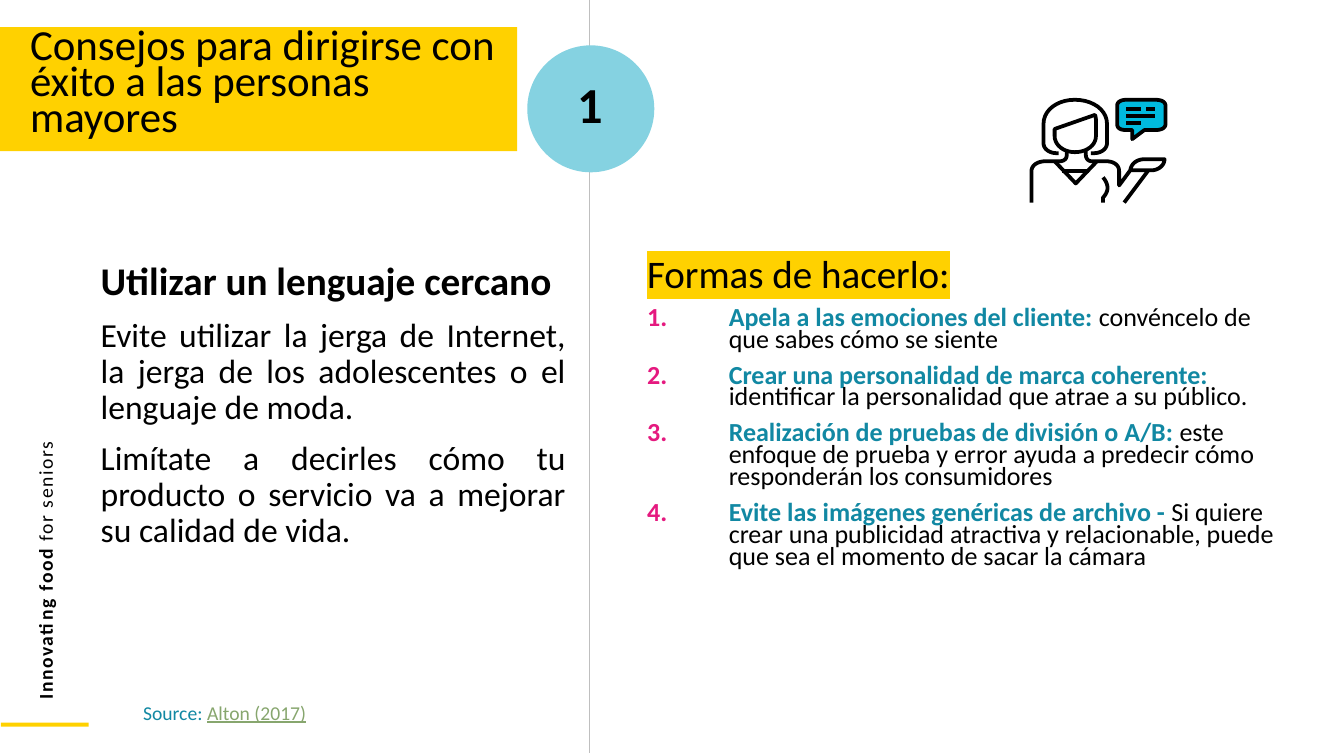
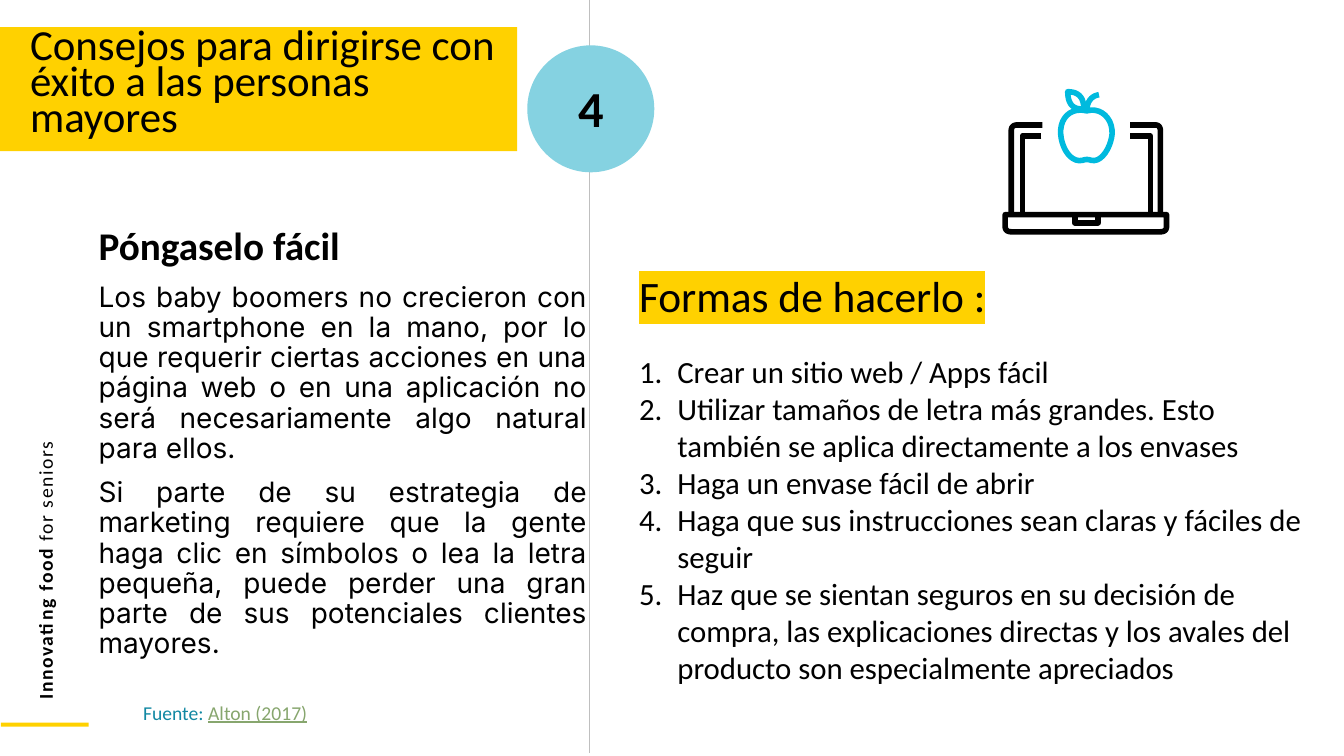
from lxml import etree
from pptx import Presentation
from pptx.dml.color import RGBColor
from pptx.enum.shapes import MSO_CONNECTOR, MSO_SHAPE
from pptx.enum.text import MSO_ANCHOR, PP_ALIGN
from pptx.oxml.ns import qn
from pptx.util import Inches, Pt

OVAL, RECT = MSO_SHAPE.OVAL, MSO_SHAPE.RECTANGLE
TOP = MSO_ANCHOR.TOP
LEFT, CENTER, JUSTIFY = PP_ALIGN.LEFT, PP_ALIGN.CENTER, PP_ALIGN.JUSTIFY

WIDTH, HEIGHT = 13.33, 7.5
DIVIDER_X, DIVIDER_END = 5.85, 7.47
COLORS = {
    "black": "000000", "yellow": "FFD100", "sky": "85D2E1", "teal": "1188A3",
    "green": "87A66E", "pink": "E5197F", "cyan": "00BADE", "gray": "BFBFBF",
}

TITLE = "Consejos para dirigirse con éxito a las personas mayores"
TAGLINE = [("Innovating food ", {"bold": True}), ("for seniors", {})]
CITATION = "Alton (2017)"

# Each icon part is a list of strokes: pairs are corners, six numbers are a cubic curve.
SPEAKER_ICON = {"weight": 2.7, "parts": [
    ([[(10.5, 1.52), (10.48, 1.52), (10.41, 1.52, 10.35, 1.48, 10.35, 1.42), (10.35, 1.23),
       (10.35, 1.09, 10.49, 0.99, 10.66, 0.99), (10.84, 0.99, 10.98, 1.09, 10.98, 1.23),
       (10.98, 1.42), (10.98, 1.48, 10.92, 1.52, 10.85, 1.52), (10.82, 1.52)]], {}),
    ([[(10.46, 1.28), (10.86, 1.14), (10.87, 1.16, 10.87, 1.19, 10.87, 1.21), (10.87, 1.35),
       (10.87, 1.44, 10.78, 1.51, 10.66, 1.51), (10.55, 1.51, 10.46, 1.44, 10.46, 1.35),
       (10.46, 1.28)],
      [(10.23, 2.01), (10.23, 1.7), (10.23, 1.64, 10.29, 1.6, 10.37, 1.6), (10.51, 1.6),
       (10.56, 1.6, 10.58, 1.57, 10.58, 1.54), (10.58, 1.5)],
      [(10.77, 1.5), (10.77, 1.54), (10.77, 1.57, 10.79, 1.6, 10.83, 1.6), (10.97, 1.6),
       (11.05, 1.6, 11.1, 1.64, 11.1, 1.7), (11.1, 1.84), (11.21, 1.69), (11.42, 1.69),
       (11.49, 1.69, 11.55, 1.64, 11.55, 1.58), (11.35, 1.58),
       (11.28, 1.58, 11.22, 1.62, 11.21, 1.69)],
      [(11.39, 1.69), (11.15, 2.01)],
      [(10.46, 1.6), (10.67, 1.82), (10.88, 1.6)],
      [(10.53, 1.7), (10.8, 1.7)]], {}),
    ([[(10.94, 1.76), (11, 1.83, 11, 1.9, 10.94, 1.96), (10.94, 2.01)]], {}),
    ([[(11.17, 0.99), (11.46, 0.99), (11.52, 0.99, 11.56, 1.01, 11.56, 1.05), (11.56, 1.23),
       (11.56, 1.27, 11.52, 1.29, 11.46, 1.29), (11.35, 1.29), (11.23, 1.38), (11.23, 1.29),
       (11.17, 1.29), (11.11, 1.29, 11.08, 1.27, 11.08, 1.23), (11.08, 1.05),
       (11.08, 1.01, 11.12, 0.99, 11.17, 0.99)]], {"fill": "cyan"}),
    ([[(11.17, 1.08), (11.32, 1.08)]], {}),
    ([[(11.37, 1.08), (11.46, 1.08)]], {}),
    ([[(11.17, 1.15), (11.46, 1.15)]], {}),
    ([[(11.17, 1.22), (11.32, 1.22)]], {}),
]}
LAPTOP_ICON = {"weight": 4, "parts": [
    ([[(10.78, 1.1), (10.92, 1.06, 11.04, 1.18, 11.03, 1.33),
       (11.02, 1.45, 10.93, 1.62, 10.82, 1.59), (10.79, 1.58, 10.77, 1.58, 10.74, 1.59),
       (10.62, 1.62, 10.53, 1.47, 10.52, 1.33), (10.51, 1.18, 10.61, 1.06, 10.78, 1.1)],
      [(10.78, 1.09), (10.78, 1.02, 10.82, 0.95, 10.9, 0.94)],
      [(10.59, 0.91), (10.68, 0.91, 10.75, 0.95, 10.75, 1.08),
       (10.65, 1.09, 10.59, 1.04, 10.59, 0.91)]], {"color": "cyan"}),
    ([[(10.34, 1.24), (10.09, 1.24), (10.05, 1.24, 10.03, 1.26, 10.03, 1.3), (10.03, 2.11)],
      [(11.21, 1.24), (11.46, 1.24), (11.49, 1.24, 11.51, 1.26, 11.51, 1.3), (11.51, 2.11)],
      [(10.33, 1.35), (10.14, 1.35), (10.14, 2.11)],
      [(11.21, 1.35), (11.41, 1.35), (11.41, 2.11)],
      [(9.97, 2.13), (11.57, 2.13), (11.57, 2.25), (11.57, 2.28, 11.55, 2.3, 11.51, 2.3),
       (10.03, 2.3), (9.99, 2.3, 9.97, 2.28, 9.97, 2.25), (9.97, 2.13)],
      [(10.66, 2.15), (10.66, 2.21), (10.89, 2.21), (10.89, 2.15)]], {}),
]}

TIPS = [
    {
        "number": "1", "number_at": (5.22, 0.74), "source": "Source: ", "icon": SPEAKER_ICON,
        "heading": "Utilizar un lenguaje cercano",
        "advice": [
            "Evite utilizar la jerga de Internet, la jerga de los adolescentes o el lenguaje "
            "de moda.",
            "Limítate a decirles cómo tu producto o servicio va a mejorar su calidad de vida.",
        ],
        "advice_box": (0.9, 2.55, 4.81, 4.07), "advice_format": {"size": 24},
        "ways_title": "Formas de hacerlo:", "ways_title_format": {"size": 27.9, "spacing": 0.7},
        "ways": [
            ("Apela a las emociones del cliente: ", "convéncelo de que sabes cómo se siente"),
            ("Crear una personalidad de marca coherente: ",
             "identificar la personalidad que atrae a su público."),
            ("Realización de pruebas de división o A/B: ",
             "este enfoque de prueba y error ayuda a predecir cómo responderán los consumidores"),
            ("Evite las imágenes genéricas de archivo - ",
             "Si quiere crear una publicidad atractiva y relacionable, puede que sea el momento "
             "de sacar la cámara"),
        ],
        "ways_box": (6.32, 2.55, 6.47, 3.76), "ways_gap": 10,
        "ways_format": {"size": 18.6, "spacing": 0.7, "before": 10, "hanging": 0.81,
                        "number_color": "pink"},
    },
    {
        "number": "4", "number_at": (5.23, 0.78), "source": "Fuente: ", "icon": LAPTOP_ICON,
        "heading": "Póngaselo fácil",
        "advice": [
            "Los baby boomers no crecieron con un smartphone en la mano, por lo que requerir "
            "ciertas acciones en una página web o en una aplicación no será necesariamente "
            "algo natural para ellos.",
            "Si parte de su estrategia de marketing requiere que la gente haga clic en símbolos "
            "o lea la letra pequeña, puede perder una gran parte de sus potenciales clientes "
            "mayores.",
        ],
        "advice_box": (0.88, 2.2, 5.04, 4.07), "advice_format": {"size": 20, "font": "Inter"},
        "ways_title": "Formas de hacerlo :", "ways_title_format": {"size": 31, "spacing": 0.9},
        "ways": [
            ("", "Crear un sitio web / Apps fácil"),
            ("", "Utilizar tamaños de letra más grandes. Esto también se aplica directamente "
                 "a los envases"),
            ("", "Haga un envase fácil de abrir"),
            ("", "Haga que sus instrucciones sean claras y fáciles de seguir"),
            ("", "Haz que se sientan seguros en su decisión de compra, las explicaciones "
                 "directas y los avales del producto son especialmente apreciados"),
        ],
        "ways_box": (6.24, 2.68, 6.93, 4.21), "ways_gap": 22,
        "ways_format": {"size": 22, "hanging": 0.38, "number_color": "black"},
    },
]


def rgb(name):
    return RGBColor.from_string(COLORS[name])


def add_solid(parent, tag, name):
    holder = etree.SubElement(parent, qn(tag))
    etree.SubElement(holder, qn("a:srgbClr")).set("val", COLORS[name])
    return holder


def add_run(paragraph, text, size=14, font="Calibri", color="black", bold=False,
            underline=False, highlight=None, tracking=None):
    run = paragraph.add_run()
    run.text = text
    run.font.size, run.font.bold, run.font.underline = Pt(size), bold, underline
    run.font.color.rgb = rgb(color)
    run.font.name = font
    properties = run.font._element
    if highlight:
        properties.find(qn("a:latin")).addprevious(add_solid(properties, "a:highlight", highlight))
    if tracking:
        properties.set("spc", str(tracking))


def write(frame, runs, align=LEFT, spacing=1.0, before=0, indent=0, hanging=0,
          number_color=None, **text_format):
    """Add a paragraph; runs is a string or (text, own format) pairs."""
    paragraph = frame.paragraphs[0]
    first = not paragraph.runs
    if not first:
        paragraph = frame.add_paragraph()
    properties = paragraph._p.get_or_add_pPr()
    if hanging or indent:
        properties.set("marL", str(Inches(hanging or indent)))
        properties.set("indent", str(-Inches(hanging)))
    if number_color:
        add_solid(properties, "a:buClr", number_color)
        etree.SubElement(properties, qn("a:buAutoNum")).set("type", "arabicPeriod")
    paragraph.alignment, paragraph.line_spacing = align, spacing
    paragraph.space_before = Pt(0 if first else before)
    for text, own in [(runs, {})] if isinstance(runs, str) else runs:
        add_run(paragraph, text, **{**text_format, **own})


def add_text_box(slide, box, wrap=True):
    shape = slide.shapes.add_textbox(*map(Inches, box))
    shape.text_frame.word_wrap = wrap
    return shape


def add_block(slide, kind, box, color):
    block = slide.shapes.add_shape(kind, *map(Inches, box))
    block.shadow.inherit = False
    block.fill.solid()
    block.fill.fore_color.rgb = rgb(color)
    block.line.fill.background()
    return block


def outline(segments, steps=10):
    """Turn corners and cubic curves into a list of points in EMU."""
    points = []
    for segment in segments:
        if len(segment) == 2:
            points.append(segment)
            continue
        curve = [points[-1], segment[:2], segment[2:4], segment[4:]]
        for step in range(1, steps + 1):
            t = step / steps
            weights = ((1 - t) ** 3, 3 * t * (1 - t) ** 2, 3 * t * t * (1 - t), t ** 3)
            points.append(tuple(sum(w * p[axis] for w, p in zip(weights, curve))
                                for axis in (0, 1)))
    return [(Inches(x), Inches(y)) for x, y in points]


def draw_part(slide, strokes, weight, color="black", fill=None):
    lines = [outline(segments) for segments in strokes]
    builder = slide.shapes.build_freeform(*lines[0][0], scale=1.0)
    for index, (start, *rest) in enumerate(lines):
        if index:
            builder.move_to(*start)
        builder.add_line_segments(rest, close=start == rest[-1])
    part = builder.convert_to_shape()
    part.shadow.inherit = False
    part.line.color.rgb, part.line.width = rgb(color), Pt(weight)
    if fill:
        part.fill.solid()
        part.fill.fore_color.rgb = rgb(fill)
    else:
        part.fill.background()


def add_frame(slide, tip):
    """Draw the divider, badge, title band, tagline and source line."""
    divider = slide.shapes.add_connector(
        MSO_CONNECTOR.STRAIGHT, Inches(DIVIDER_X), 0, Inches(DIVIDER_X), Inches(DIVIDER_END))
    divider.line.color.rgb, divider.line.width = rgb("gray"), Pt(0.75)
    etree.SubElement(divider._element.spPr, qn("a:effectLst"))
    add_block(slide, OVAL, (5.23, 0.45, 1.26, 1.26), "sky")
    add_block(slide, RECT, (0.01, 7.17, 0.87, 0.04), "yellow")

    tagline = add_text_box(slide, (-3.32, 3.1, 7.54, 0.34))
    tagline.rotation = 270
    write(tagline.text_frame, TAGLINE, tracking=110)

    band = add_block(slide, RECT, (0, 0.27, 5.13, 1.23), "yellow").text_frame
    band.word_wrap, band.vertical_anchor = True, TOP
    write(band, TITLE, size=30.6, spacing=0.7, indent=0.2)

    number = add_text_box(slide, (*tip["number_at"], 1.26, 0.94)).text_frame
    write(number, tip["number"], size=36, bold=True, align=CENTER, spacing=0.9)

    source = add_text_box(slide, (1.32, 6.9, 1.85, 0.34), wrap=False).text_frame
    write(source, [(tip["source"], {"color": "teal"}),
                   (CITATION, {"color": "green", "underline": True})])


def add_tip(slide, tip):
    add_frame(slide, tip)
    advice = add_text_box(slide, tip["advice_box"]).text_frame
    body = {"align": JUSTIFY, "spacing": 0.9, "before": 10}
    write(advice, tip["heading"], size=28, bold=True, **body)
    for text in tip["advice"]:
        write(advice, text, **body, **tip["advice_format"])

    ways = add_text_box(slide, tip["ways_box"]).text_frame
    write(ways, tip["ways_title"], highlight="yellow", **tip["ways_title_format"])
    for index, (lead, detail) in enumerate(tip["ways"]):
        runs = [(lead, {"color": "teal", "bold": True})] if lead else []
        gap = {"before": tip["ways_gap"]} if index == 0 else {}
        write(ways, runs + [(detail, {})], **{**tip["ways_format"], **gap})

    for strokes, style in tip["icon"]["parts"]:
        draw_part(slide, strokes, tip["icon"]["weight"], **style)


def main():
    deck = Presentation()
    deck.slide_width, deck.slide_height = Inches(WIDTH), Inches(HEIGHT)
    for tip in TIPS:
        add_tip(deck.slides.add_slide(deck.slide_layouts[6]), tip)
    deck.save("out.pptx")


if __name__ == "__main__":
    main()
